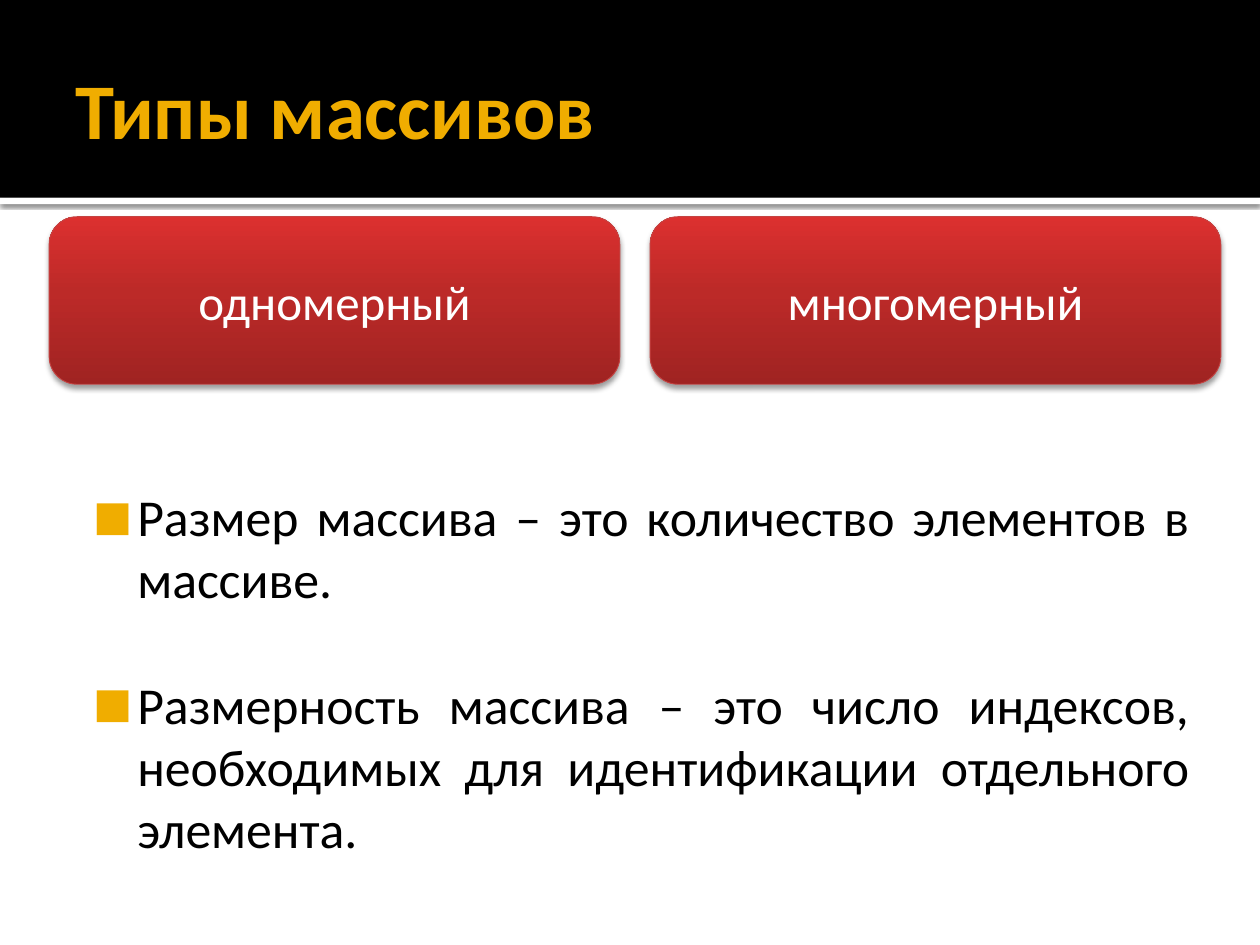
import copy

import pptx
import pptx.dml.color
import pptx.enum.shapes
import pptx.enum.text
import pptx.oxml
import pptx.oxml.ns
import pptx.util
from pptx.util import Inches, Pt

# Content
TITLE = "Типы массивов"
ARRAY_TYPES = ["одномерный", "многомерный"]
DEFINITIONS = [
    "Размер массива – это количество элементов в массиве.",
    "Размерность массива – это число индексов, необходимых для "
    "идентификации отдельного элемента.",
]

# Style
FONT = "Calibri"
COLORS = {"white": "FFFFFF", "black": "000000", "accent": "F0AD00", "border": "C54342"}
CARD_GRADIENT = [(0, "A02322"), (0.55, "BC2A28"), (1, "DC302F")]
SHAPES = pptx.enum.shapes.MSO_SHAPE
ALIGN = pptx.enum.text.PP_ALIGN
ANCHOR = pptx.enum.text.MSO_ANCHOR
qn = pptx.oxml.ns.qn

# Layout
HEADER_HEIGHT = 1.57
CARD_LEFT, CARD_TOP, CARD_WIDTH, CARD_HEIGHT, CARD_GAP = 0.39, 1.72, 4.53, 1.33, 0.24


def rgb(name):
    return pptx.dml.color.RGBColor.from_string(COLORS.get(name, name))


def add_block(slide, kind, left, top, width, height):
    block = slide.shapes.add_shape(
        kind, Inches(left), Inches(top), Inches(width), Inches(height))
    block.shadow.inherit = False
    block.line.fill.background()
    return block


def add_band(slide, top, height, color):
    band = add_block(slide, SHAPES.RECTANGLE, 0, top, 10, height)
    band.fill.solid()
    band.fill.fore_color.rgb = rgb(color)
    return band


def drop_shadow(shape, opacity, blur, distance):
    effects = shape._element.spPr.find(qn("a:effectLst"))
    effects.append(pptx.oxml.parse_xml(
        f'<a:outerShdw {pptx.oxml.ns.nsdecls("a")} blurRad="{Pt(blur)}" '
        f'dist="{Pt(distance)}" dir="5400000" algn="t" rotWithShape="0">'
        f'<a:srgbClr val="{COLORS["black"]}"><a:alpha val="{opacity * 1000}"/>'
        '</a:srgbClr></a:outerShdw>'))


def fill_gradient(shape, stops):
    shape.fill.gradient()
    stop_list = shape._element.spPr.find(".//" + qn("a:gsLst"))
    while len(stop_list) < len(stops):
        stop_list.append(copy.deepcopy(stop_list[-1]))
    for stop, (position, color) in zip(shape.fill.gradient_stops, stops):
        stop.position = position
        stop.color.rgb = rgb(color)
    shape.fill.gradient_angle = 90


def add_text_area(slide, left, top, width, height, insets):
    box = slide.shapes.add_textbox(
        Inches(left), Inches(top), Inches(width), Inches(height))
    frame = box.text_frame
    frame.word_wrap = True
    (frame.margin_left, frame.margin_top,
     frame.margin_right, frame.margin_bottom) = map(Inches, insets)
    return frame


def write(paragraph, text, size, color, align, bold=False):
    paragraph.text = text
    paragraph.alignment = align
    font = paragraph.font
    font.name, font.size, font.bold = FONT, Pt(size), bold
    font.color.rgb = rgb(color)


def add_bullet(paragraph):
    props = paragraph._p.get_or_add_pPr()
    props.set("marL", str(Inches(0.48)))
    props.set("indent", str(Inches(-0.35)))
    ns = pptx.oxml.ns.nsdecls("a")
    bullet = [
        f'<a:buClr {ns}><a:srgbClr val="{COLORS["accent"]}"/></a:buClr>',
        f'<a:buSzPct {ns} val="80000"/>',
        f'<a:buFont {ns} typeface="{FONT}"/>',
        f'<a:buChar {ns} char="■"/>',
    ]
    defaults = props.find(qn("a:defRPr"))
    for part in bullet:
        defaults.addprevious(pptx.oxml.parse_xml(part))


def main():
    deck = pptx.Presentation()
    deck.slide_width, deck.slide_height = Inches(10), Inches(7.5)
    slide = deck.slides.add_slide(deck.slide_layouts[6])
    slide.background.fill.solid()
    slide.background.fill.fore_color.rgb = rgb("white")

    # Header with its white rule
    rule = add_band(slide, HEADER_HEIGHT, 0.05, "white")
    drop_shadow(rule, 60, 2.5, 0.8)
    add_band(slide, 0, HEADER_HEIGHT, "black")
    title = add_text_area(slide, 0.5, 0.17, 9, 1.37, (0.1, 0.05, 0.05, 0.05))
    title.vertical_anchor = ANCHOR.MIDDLE
    write(title.paragraphs[0], TITLE, 45, "accent", ALIGN.LEFT, bold=True)

    # Definitions
    body = add_text_area(slide, 0.55, 3.75, 9, 2.73, (0.06, 0.1, 0.1, 0.05))
    for index, definition in enumerate(DEFINITIONS):
        paragraph = body.add_paragraph() if index else body.paragraphs[0]
        write(paragraph, definition, 29.6, "black", ALIGN.JUSTIFY)
        paragraph.space_before = Pt(36 if index else 0)
        add_bullet(paragraph)

    # Array type cards
    for index, array_type in enumerate(ARRAY_TYPES):
        left = CARD_LEFT + index * (CARD_WIDTH + CARD_GAP)
        card = add_block(slide, SHAPES.ROUNDED_RECTANGLE,
                         left, CARD_TOP, CARD_WIDTH, CARD_HEIGHT)
        fill_gradient(card, CARD_GRADIENT)
        card.line.color.rgb = rgb("border")
        card.line.width = Pt(0.5)
        drop_shadow(card, 38, 3.1, 2)
        card.text_frame.vertical_anchor = ANCHOR.MIDDLE
        write(card.text_frame.paragraphs[0], array_type, 28, "white", ALIGN.CENTER)

    deck.save("out.pptx")


if __name__ == "__main__":
    main()
